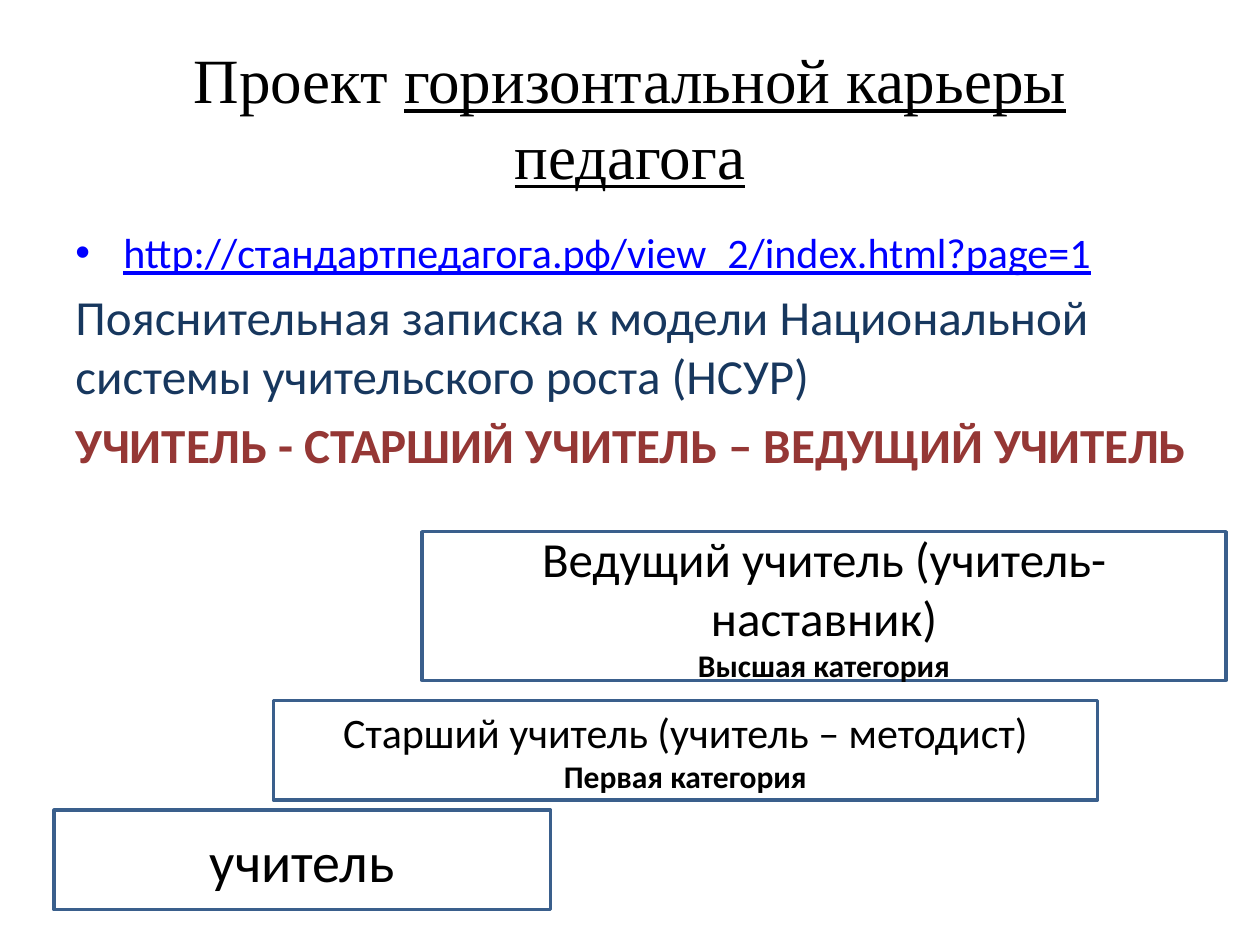
"""Build a slide on the horizontal career steps of a teacher."""
from lxml.etree import SubElement
from pptx import Presentation
from pptx.dml.color import RGBColor
from pptx.enum.shapes import MSO_SHAPE as SHAPE
from pptx.enum.text import MSO_ANCHOR as ANCHOR, PP_ALIGN as ALIGN
from pptx.oxml.ns import qn
from pptx.util import Inches, Pt

W, H = 10, 7.5
BLACK, WHITE, BORDER = "000000", "FFFFFF", "3A5F8C"
SERIF = "Times New Roman"

TITLE = [("Проект ", {}), ("горизонтальной карьеры педагога", {"underline": True})]
BODY = [
    ("http://стандартпедагога.рф/view_2/index.html?page=1",
     {"size": 24, "color": "0000FF", "underline": True}),
    ("Пояснительная записка к модели Национальной системы учительского роста (НСУР)",
     {"size": 28, "color": "17375E"}),
    ("УЧИТЕЛЬ - СТАРШИЙ УЧИТЕЛЬ – ВЕДУЩИЙ УЧИТЕЛЬ",
     {"size": 28, "color": "953735", "bold": True}),
]
STEPS = [
    ((0.43, 6.43, 3.94, 0.79), "учитель", 32, None),
    ((2.17, 5.56, 6.54, 0.79), "Старший учитель (учитель – методист)", 24, "Первая категория"),
    ((3.35, 4.22, 6.38, 1.18), "Ведущий учитель (учитель-наставник)", 28, "Высшая категория"),
]


def rgb(code):
    """Turn a hex string into a colour."""
    return RGBColor.from_string(code)


def add_text(p, text, size=18, color=BLACK, font="Calibri", bold=False, underline=False):
    """Add a formatted run to a paragraph."""
    r = p.add_run()
    r.text = text
    f = r.font
    f.size, f.name, f.bold, f.underline = Pt(size), font, bold, underline
    f.color.rgb = rgb(color)


def add_bullet(p, indent):
    """Give a paragraph a hanging round bullet."""
    pPr = p._p.get_or_add_pPr()
    pPr.set("marL", str(Inches(indent)))
    pPr.set("indent", str(-Inches(indent)))
    SubElement(pPr, qn("a:buFont"), typeface="Arial")
    SubElement(pPr, qn("a:buChar"), char="•")


def add_box(s, box, anchor):
    """Add a wrapping text box and return its text frame."""
    tf = s.shapes.add_textbox(*map(Inches, box)).text_frame
    tf.word_wrap, tf.vertical_anchor = True, anchor
    return tf


def next_paragraph(tf, i):
    """Return the first paragraph, or a new one after it."""
    return tf.add_paragraph() if i else tf.paragraphs[0]


def add_step(s, box, name, size, category):
    """Add one outlined career step."""
    sp = s.shapes.add_shape(SHAPE.RECTANGLE, *map(Inches, box))
    sp.shadow.inherit = False
    sp.fill.solid()
    sp.fill.fore_color.rgb = rgb(WHITE)
    sp.line.color.rgb = rgb(BORDER)
    sp.line.width = Pt(2)
    tf = sp.text_frame
    tf.word_wrap, tf.vertical_anchor = True, ANCHOR.MIDDLE
    lines = [(name, {"size": size})]
    if category:
        lines.append((category, {"bold": True}))
    for i, (text, fmt) in enumerate(lines):
        p = next_paragraph(tf, i)
        p.alignment = ALIGN.CENTER
        add_text(p, text, **fmt)


def main():
    """Build and save the slide."""
    prs = Presentation()
    prs.slide_width, prs.slide_height = Inches(W), Inches(H)
    s = prs.slides.add_slide(prs.slide_layouts[6])

    p = add_box(s, (0.5, 0.3, 9, 1.25), ANCHOR.MIDDLE).paragraphs[0]
    p.alignment = ALIGN.CENTER
    for text, fmt in TITLE:
        add_text(p, text, size=36, font=SERIF, **fmt)

    tf = add_box(s, (0.5, 1.75, 9.22, 4.95), ANCHOR.TOP)
    for i, (text, fmt) in enumerate(BODY):
        p = next_paragraph(tf, i)
        p.space_before = Pt(fmt["size"] * 0.2)
        if i == 0:
            add_bullet(p, 0.38)
        add_text(p, text, **fmt)

    for step in STEPS:
        add_step(s, *step)
    prs.save("out.pptx")


if __name__ == "__main__":
    main()
